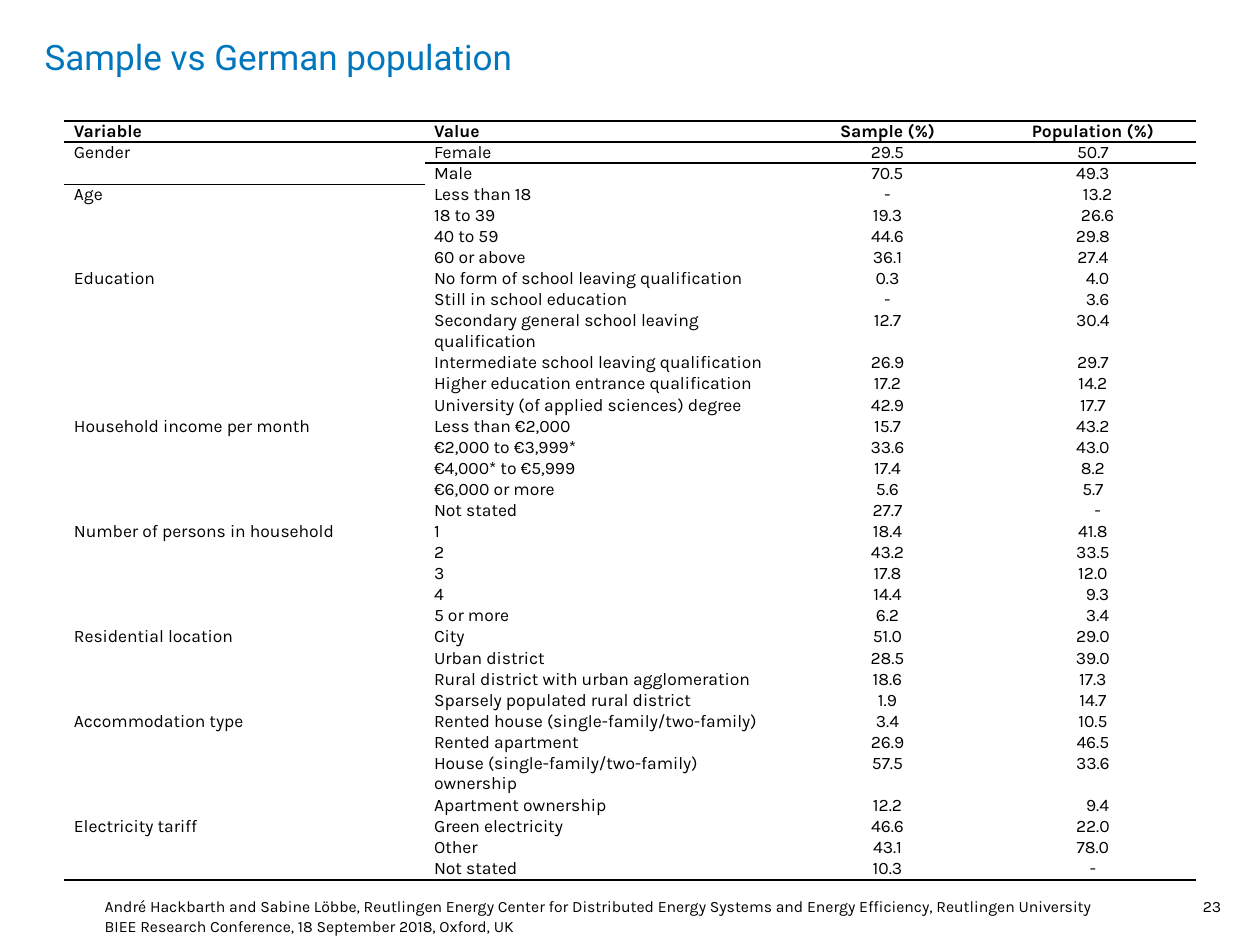
from lxml.etree import SubElement
from pptx import Presentation
from pptx.dml.color import RGBColor
from pptx.enum.text import MSO_ANCHOR, PP_ALIGN
from pptx.oxml import parse_xml
from pptx.oxml.ns import nsdecls, qn
from pptx.util import Cm, Pt

BLACK, BLUE = "000000", "0076BD"
INDENTED = True
NO_STYLE = "{2D5ABB26-0587-4C30-8999-92F81FD0307C}"

HEADER = ["Variable", "Value", "Sample (%)", "Population (%)"]
# Each variable: how many rows its label spans, then value, sample, population
GROUPS = [
    ("Gender", 2, [
        ("Female", "29.5", "50.7"),
        ("Male", "70.5", "49.3"),
    ]),
    ("Age", 4, [
        ("Less than 18", "-", "13.2", INDENTED),
        ("18 to 39", "19.3", "26.6", INDENTED),
        ("40 to 59", "44.6", "29.8"),
        ("60 or above", "36.1", "27.4"),
    ]),
    ("Education", 6, [
        ("No form of school leaving qualification", "0.3", "4.0", INDENTED),
        ("Still in school education", "-", "3.6", INDENTED),
        ("Secondary general school leaving qualification", "12.7", "30.4"),
        ("Intermediate school leaving qualification", "26.9", "29.7"),
        ("Higher education entrance qualification", "17.2", "14.2"),
        ("University (of applied sciences) degree", "42.9", "17.7"),
    ]),
    ("Household income per month", 5, [
        ("Less than €2,000", "15.7", "43.2"),
        ("€2,000 to €3,999*", "33.6", "43.0"),
        ("€4,000* to €5,999", "17.4", "8.2"),
        ("€6,000 or more", "5.6", "5.7"),
        ("Not stated", "27.7", "-", INDENTED),
    ]),
    ("Number of persons in household", 5, [
        ("1", "18.4", "41.8"),
        ("2", "43.2", "33.5"),
        ("3", "17.8", "12.0"),
        ("4", "14.4", "9.3", INDENTED),
        ("5 or more", "6.2", "3.4", INDENTED),
    ]),
    ("Residential location", 4, [
        ("City", "51.0", "29.0"),
        ("Urban district", "28.5", "39.0"),
        ("Rural district with urban agglomeration", "18.6", "17.3"),
        ("Sparsely populated rural district", "1.9", "14.7"),
    ]),
    ("Accommodation type", 4, [
        ("Rented house (single-family/two-family)", "3.4", "10.5"),
        ("Rented apartment", "26.9", "46.5"),
        ("House (single-family/two-family) ownership", "57.5", "33.6"),
        ("Apartment ownership", "12.2", "9.4", INDENTED),
    ]),
    ("Electricity tariff", 2, [
        ("Green electricity", "46.6", "22.0"),
        ("Other", "43.1", "78.0"),
        ("Not stated", "10.3", "-"),
    ]),
]


def color(hex_string):
    return RGBColor.from_string(hex_string)


class SlideBuilder:
    heading_font, body_font = "Roboto", "Karla"
    table_size, footer_size, title_size = 10, 9, 20
    cell_margin = 0.19

    def __init__(self, slide):
        self.slide = slide

    def run(self, paragraph, text, size, font, hex_string=BLACK, bold=False):
        run = paragraph.add_run()
        run.text = text
        run.font.size, run.font.name, run.font.bold = Pt(size), font, bold
        run.font.color.rgb = color(hex_string)

    def text(self, left, top, width, height, lines, size, font,
             hex_string=BLACK, align=PP_ALIGN.LEFT, spacing=1.0):
        shape = self.slide.shapes.add_textbox(Cm(left), Cm(top), Cm(width), Cm(height))
        frame = shape.text_frame
        frame.word_wrap = True
        frame.margin_left = frame.margin_right = frame.margin_top = frame.margin_bottom = 0
        for index, line in enumerate(lines):
            paragraph = frame.add_paragraph() if index else frame.paragraphs[0]
            paragraph.alignment, paragraph.line_spacing = align, spacing
            self.run(paragraph, line, size, font, hex_string)

    def table(self, left, top, column_widths, row_heights):
        shape = self.slide.shapes.add_table(
            len(row_heights), len(column_widths), Cm(left), Cm(top),
            Cm(sum(column_widths)), Cm(sum(row_heights)))
        table = shape.table
        table.first_row = table.horz_banding = False
        table._tbl.tblPr.find(qn("a:tableStyleId")).text = NO_STYLE
        for column, width in zip(table.columns, column_widths):
            column.width = Cm(width)
        for row, height in zip(table.rows, row_heights):
            row.height = Cm(height)
        return table

    def cell(self, cell, text, align=PP_ALIGN.LEFT, bold=False, indented=False):
        cell.margin_left = cell.margin_right = Cm(self.cell_margin)
        cell.margin_top = cell.margin_bottom = 0
        cell.vertical_anchor = MSO_ANCHOR.TOP
        cell.fill.background()
        paragraph = cell.text_frame.paragraphs[0]
        paragraph.alignment = align
        if indented:
            paragraph._p.get_or_add_pPr().set("marL", str(Cm(self.cell_margin)))
        if text:
            self.run(paragraph, text, self.table_size, self.body_font, bold=bold)
        else:
            # Keeps an empty cell from growing its row
            end = SubElement(paragraph._p, qn("a:endParaRPr"), sz=str(self.table_size * 100))
            SubElement(end, qn("a:latin"), typeface=self.body_font)

    def borders(self, row, **widths):
        for cell in row.cells:
            properties = cell._tc.get_or_add_tcPr()
            for position, (side, width) in enumerate(widths.items()):
                properties.insert(position, parse_xml(
                    f'<a:ln{side} {nsdecls("a")} w="{Pt(width)}"><a:solidFill>'
                    f'<a:srgbClr val="{BLACK}"/></a:solidFill></a:ln{side}>'))


def main():
    presentation = Presentation()
    presentation.slide_width, presentation.slide_height = Cm(25.4), Cm(19.05)
    builder = SlideBuilder(presentation.slides.add_slide(presentation.slide_layouts[6]))

    # Footer
    builder.text(23.5, 18.03, 1.12, 0.64, ["23"], builder.footer_size,
                 builder.body_font, align=PP_ALIGN.RIGHT, spacing=1.1)
    builder.text(2.11, 18.03, 21.11, 0.89, [
        "André Hackbarth and Sabine Löbbe, Reutlingen Energy Center for Distributed "
        "Energy Systems and Energy Efficiency, Reutlingen University",
        "BIEE Research Conference, 18 September 2018, Oxford, UK",
    ], builder.footer_size, builder.body_font, spacing=1.1)

    # Title
    builder.text(0.9, 0.71, 18.8, 2.79, ["Sample vs German population"],
                 builder.title_size, builder.heading_font, BLUE)

    # Table: rows grow to fit their text
    row_count = 1 + sum(len(entries) for _, _, entries in GROUPS)
    row_heights = [0.28] * row_count
    row_heights[9] = 0.51
    table = builder.table(1.3, 2.44, [7.26, 7.26, 4.14, 4.14], row_heights)
    alignments = [PP_ALIGN.LEFT] * 2 + [PP_ALIGN.CENTER] * 2
    for column, (text, align) in enumerate(zip(HEADER, alignments)):
        builder.cell(table.cell(0, column), text, align, bold=True)

    row = 1
    for variable, span, entries in GROUPS:
        first_row = row
        for value, sample, population, *indented in entries:
            texts = [variable if row == first_row else "", value, sample, population]
            for column, (text, align) in enumerate(zip(texts, alignments)):
                builder.cell(table.cell(row, column), text, align,
                             indented=bool(indented) and column == 3)
            row += 1
        table.cell(first_row, 0).merge(table.cell(first_row + span - 1, 0))

    # Rules around the header and below the last row
    builder.borders(table.rows[0], T=1.5, B=1)
    builder.borders(table.rows[1], T=1)
    builder.borders(table.rows[row_count - 1], B=1.5)

    presentation.save("out.pptx")


if __name__ == "__main__":
    main()
